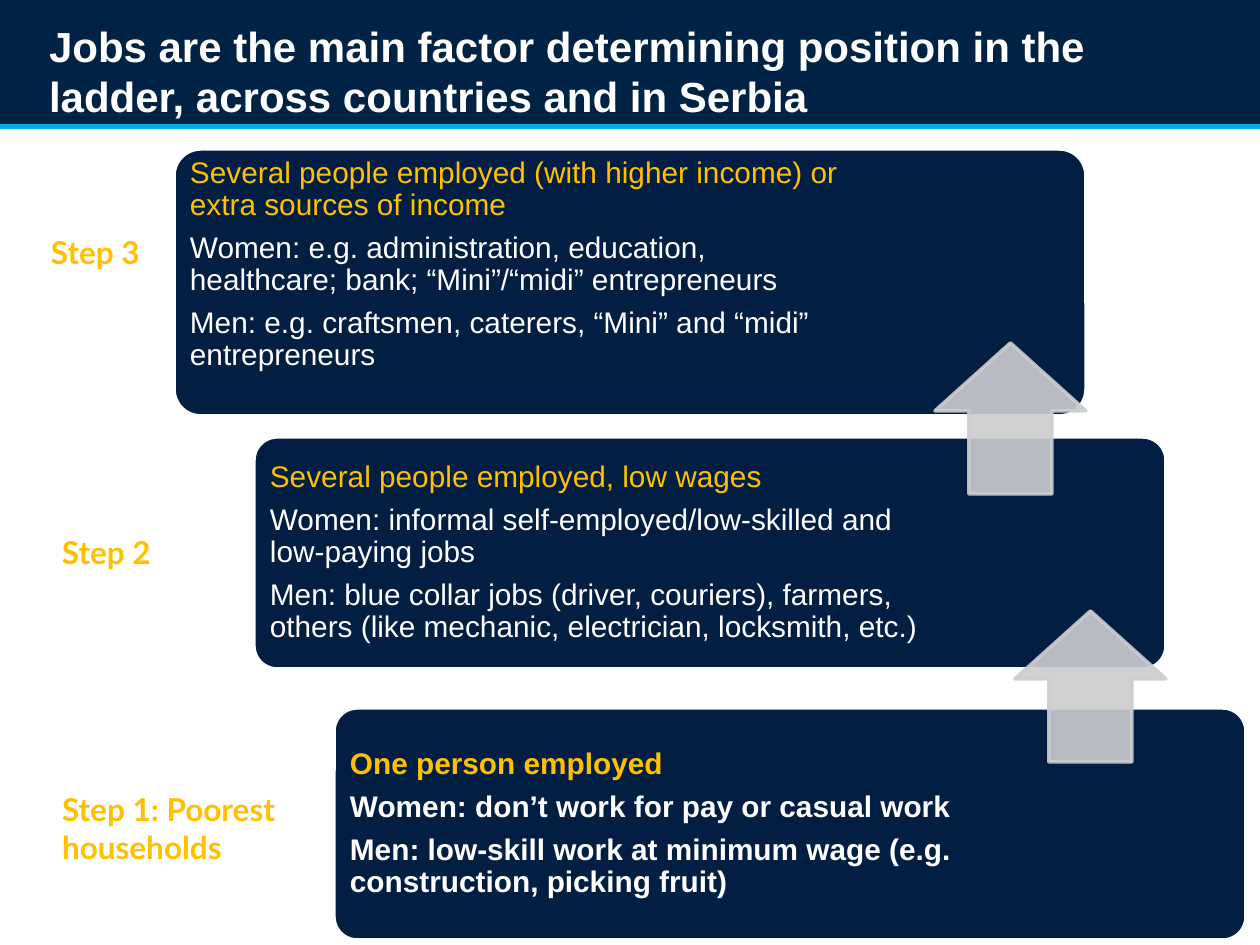
from pptx import Presentation
from pptx.dml.color import RGBColor
from pptx.enum.shapes import MSO_SHAPE
from pptx.enum.text import MSO_ANCHOR, PP_ALIGN
from pptx.oxml.ns import qn
from pptx.util import Emu, Pt
from lxml.etree import SubElement

EMU_PER_PX = 914400 / 126

NAVY = RGBColor(0x00, 0x23, 0x45)
CYAN = RGBColor(0x00, 0xAD, 0xE4)
CARD = RGBColor(0x02, 0x1F, 0x43)
GOLD = RGBColor(0xFF, 0xC0, 0x00)
GREY = RGBColor(0xCC, 0xCD, 0xCF)
WHITE = RGBColor(0xFF, 0xFF, 0xFF)

CARD_LEFT, CARD_SHIFT, CARD_WIDTH = 174, 80, 912
ARROW_SIZE = 151

STEPS = [
    dict(top=149, height=267, bold=False, anchor=MSO_ANCHOR.TOP, lines=[
        "Several people employed (with higher income) or extra sources of income",
        "Women: e.g. administration, education, healthcare; bank; “Mini”/“midi” entrepreneurs",
        "Men: e.g. craftsmen, caterers, “Mini” and “midi” entrepreneurs"]),
    dict(top=437, height=232, bold=False, anchor=MSO_ANCHOR.MIDDLE, lines=[
        "Several people employed, low wages",
        "Women: informal self-employed/low-skilled and low-paying jobs",
        "Men: blue collar jobs (driver, couriers), farmers, others (like mechanic, "
        "electrician, locksmith, etc.)"]),
    dict(top=708, height=232, bold=True, anchor=MSO_ANCHOR.MIDDLE, lines=[
        "One person employed",
        "Women: don’t work for pay or casual work",
        "Men: low-skill work at minimum wage (e.g. construction, picking fruit)"]),
]
ARROW_TOPS = [343, 611]
LABELS = [
    ("Step 3", 38, 227, 242, 50),
    ("Step 2", 49, 527, 242, 50),
    ("Step 1: Poorest households", 49, 784, 273, 89),
]


def px(length):
    return Emu(round(length * EMU_PER_PX))


class SlideBuilder:
    def __init__(self, page):
        self.page = page

    def area(self, *lengths):
        return [px(length) for length in lengths]

    def fill_frame(self, frame, lines, anchor, insets, spacing=None, **font):
        """Fill a frame; lines holds (text, colour) pairs, insets left, top, right, bottom."""
        left, top, right, bottom = self.area(*insets)
        settings = dict(word_wrap=True, vertical_anchor=anchor, margin_left=left,
                        margin_top=top, margin_right=right, margin_bottom=bottom)
        for name, value in settings.items():
            setattr(frame, name, value)
        for index, (text, color) in enumerate(lines):
            para = frame.add_paragraph() if index else frame.paragraphs[0]
            for name, value in dict(spacing or {}, alignment=PP_ALIGN.LEFT).items():
                setattr(para, name, value)
            span = para.add_run()
            span.text = text
            for name, value in font.items():
                setattr(span.font, name, value)
            span.font.color.rgb = color

    def shape(self, kind, area, fill, line=None, adjustments=()):
        shape = self.page.shapes.add_shape(kind, *self.area(*area))
        shape.shadow.inherit = False
        shape.fill.solid()
        shape.fill.fore_color.rgb = fill
        if line is None:
            shape.line.fill.background()
        else:
            shape.line.color.rgb = line
            shape.line.width = Pt(2)
        for index, value in enumerate(adjustments):
            shape.adjustments[index] = value
        return shape

    def arrow(self, left, top):
        arrow = self.shape(MSO_SHAPE.UP_ARROW, (left, top, ARROW_SIZE, ARROW_SIZE),
                           GREY, GREY, (0.55, 0.45))
        for color in arrow.element.spPr.iter(qn("a:srgbClr")):
            SubElement(color, qn("a:alpha"), val="90000")

    def text(self, area, *args, **kwargs):
        box = self.page.shapes.add_textbox(*self.area(*area))
        self.fill_frame(box.text_frame, *args, **kwargs)

    def title(self, area, text):
        title = self.page.shapes.title
        title.left, title.top, title.width, title.height = self.area(*area)
        self.fill_frame(title.text_frame, [(text, WHITE)], MSO_ANCHOR.BOTTOM, (0, 0, 0, 0),
                        name="Arial", size=Pt(24), bold=True)
        title.element.getparent().append(title.element)

    def card(self, left, top, height, lines, bold, anchor):
        self.shape(MSO_SHAPE.ROUNDED_RECTANGLE, (left, top, CARD_WIDTH, height),
                   CARD, WHITE, (0.1,))
        colors = [GOLD] + [WHITE] * (len(lines) - 1)
        top_inset = 2 if anchor == MSO_ANCHOR.TOP else 9
        self.text((left + 7, top + 7, 668, height - 14), list(zip(lines, colors)), anchor,
                  (9, top_inset, 9, 9), dict(line_spacing=0.9, space_after=Pt(6)),
                  name="Arial", size=Pt(17), bold=bold)


def main():
    deck = Presentation()
    deck.slide_width, deck.slide_height = px(1260), px(945)
    builder = SlideBuilder(deck.slides.add_slide(deck.slide_layouts[5]))

    builder.shape(MSO_SHAPE.RECTANGLE, (0, 0, 1260, 129), NAVY)
    builder.shape(MSO_SHAPE.RECTANGLE, (0, 124, 1260, 5), CYAN)
    builder.title((49, 16, 1166, 105), "Jobs are the main factor determining position "
                  "in the ladder, across countries and in Serbia")

    for index, step in enumerate(STEPS):
        builder.card(CARD_LEFT + index * CARD_SHIFT, **step)
    for index, top in enumerate(ARROW_TOPS):
        builder.arrow(CARD_LEFT + CARD_WIDTH - ARROW_SIZE + index * CARD_SHIFT, top)
    for text, *area in LABELS:
        builder.text(area, [(text, GOLD)], MSO_ANCHOR.TOP, (13, 6, 13, 6),
                     name="Lato", size=Pt(18), bold=True)

    deck.save("out.pptx")


if __name__ == "__main__":
    main()
